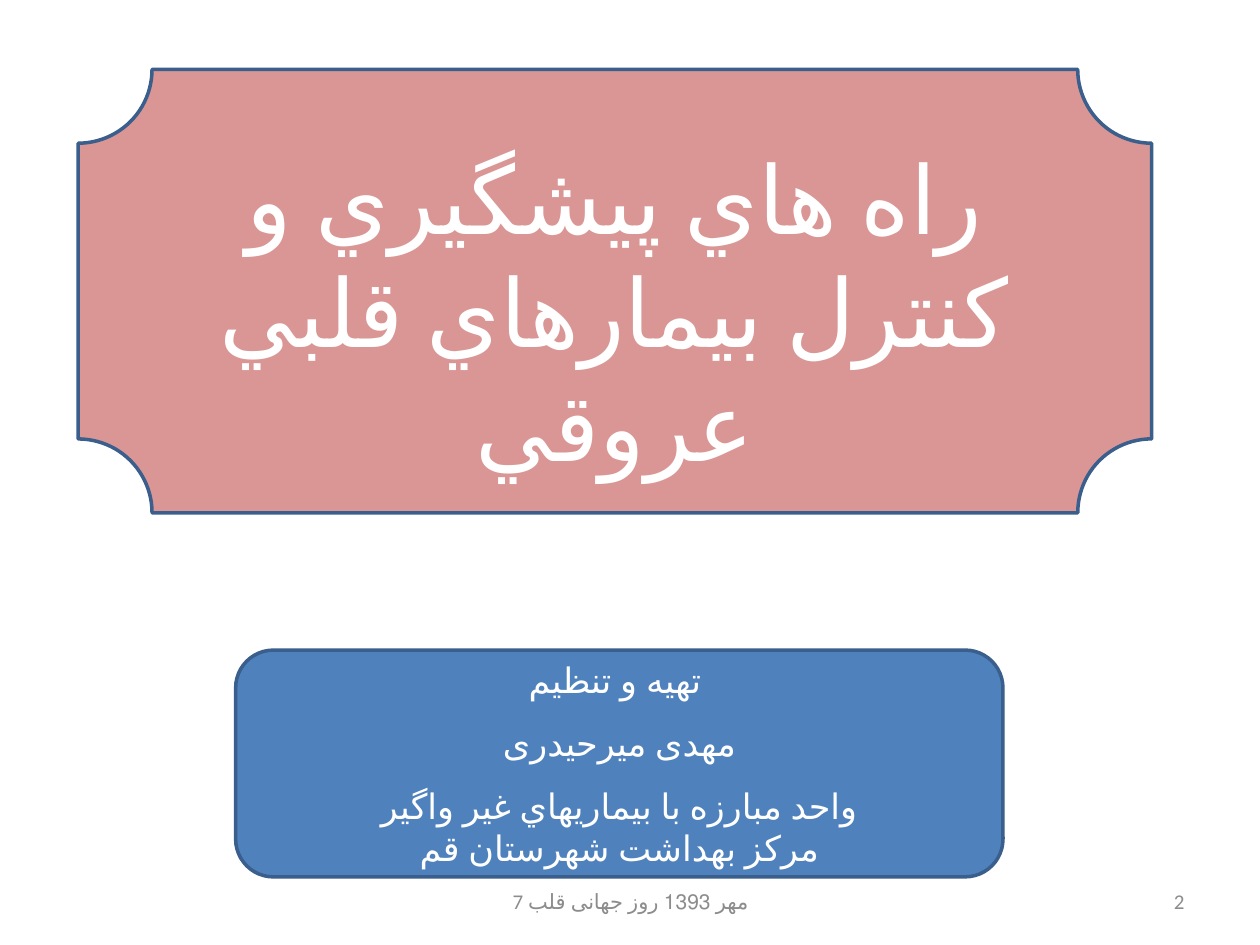
from pptx import Presentation
from pptx.dml.color import RGBColor
from pptx.enum.lang import MSO_LANGUAGE_ID
from pptx.enum.shapes import MSO_SHAPE
from pptx.enum.text import MSO_ANCHOR, PP_ALIGN
from pptx.util import Inches, Pt

COLORS = {
    "plaque": "D99694",
    "credits": "4F81BD",
    "outline": "3A5F8C",
    "text": "FFFFFF",
    "footer": "8C8C8C",
}
FONT = "Calibri"


def format_paragraph(paragraph, size, color, alignment=PP_ALIGN.CENTER, rtl=False):
    """Align a paragraph, set its direction and format its runs as Persian."""
    paragraph.alignment = alignment
    if rtl:
        paragraph._p.get_or_add_pPr().set("rtl", "1")
    for run in paragraph.runs:
        run.font.name = FONT
        run.font.size = Pt(size)
        run.font.language_id = MSO_LANGUAGE_ID.FARSI
        run.font.color.rgb = RGBColor.from_string(COLORS[color])


def add_panel(slide, box, preset, fill):
    """Add a filled, outlined shape and return its text frame."""
    shape = slide.shapes.add_shape(preset, *map(Inches, box))
    shape.shadow.inherit = False
    shape.fill.solid()
    shape.fill.fore_color.rgb = RGBColor.from_string(COLORS[fill])
    shape.line.color.rgb = RGBColor.from_string(COLORS["outline"])
    shape.line.width = Pt(2)
    text_frame = shape.text_frame
    text_frame.word_wrap = True
    text_frame.vertical_anchor = MSO_ANCHOR.MIDDLE
    return text_frame


def add_title_plaque(slide, box):
    """Place the plaque with the presentation title."""
    text_frame = add_panel(slide, box, MSO_SHAPE.PLAQUE, "plaque")
    text_frame.margin_top = Inches(0.35)
    text_frame.text = "راه هاي پيشگيري و كنترل بيمارهاي قلبي عروقي"
    format_paragraph(text_frame.paragraphs[0], 54, "text")


def add_credits(slide, box):
    """Place the rounded panel naming the author and the unit."""
    lines = [
        ("تهيه و تنظيم ", False, 1.0),
        ("مهدی میرحیدری", True, 1.5),
        ("واحد مبارزه با بيماريهاي غير واگير", True, 1.5),
        ("مرکز بهداشت شهرستان قم", True, 1.0),
    ]
    text_frame = add_panel(slide, box, MSO_SHAPE.ROUNDED_RECTANGLE, "credits")
    text_frame.text = "\n".join(text for text, _, _ in lines)
    for paragraph, (_, rtl, spacing) in zip(text_frame.paragraphs, lines):
        format_paragraph(paragraph, 20, "text", rtl=rtl)
        paragraph.line_spacing = spacing


def add_footer_text(slide, box, text, alignment):
    """Place one grey text of the footer row."""
    text_frame = slide.shapes.add_textbox(*map(Inches, box)).text_frame
    text_frame.word_wrap = True
    text_frame.vertical_anchor = MSO_ANCHOR.MIDDLE
    text_frame.text = text
    format_paragraph(text_frame.paragraphs[0], 12, "footer", alignment)


def main():
    """Build the slide and save the presentation."""
    presentation = Presentation()
    presentation.slide_width = Inches(10)
    presentation.slide_height = Inches(7.5)
    slide = presentation.slides.add_slide(presentation.slide_layouts[6])
    add_footer_text(slide, (3.42, 6.95, 3.17, 0.4), "7 مهر 1393 روز جهانی قلب", PP_ALIGN.CENTER)
    add_footer_text(slide, (7.17, 6.95, 2.33, 0.4), "2", PP_ALIGN.RIGHT)
    add_credits(slide, (1.87, 5.16, 6.09, 1.8))
    add_title_plaque(slide, (0.62, 0.55, 8.52, 3.52))
    presentation.save("out.pptx")


if __name__ == "__main__":
    main()
